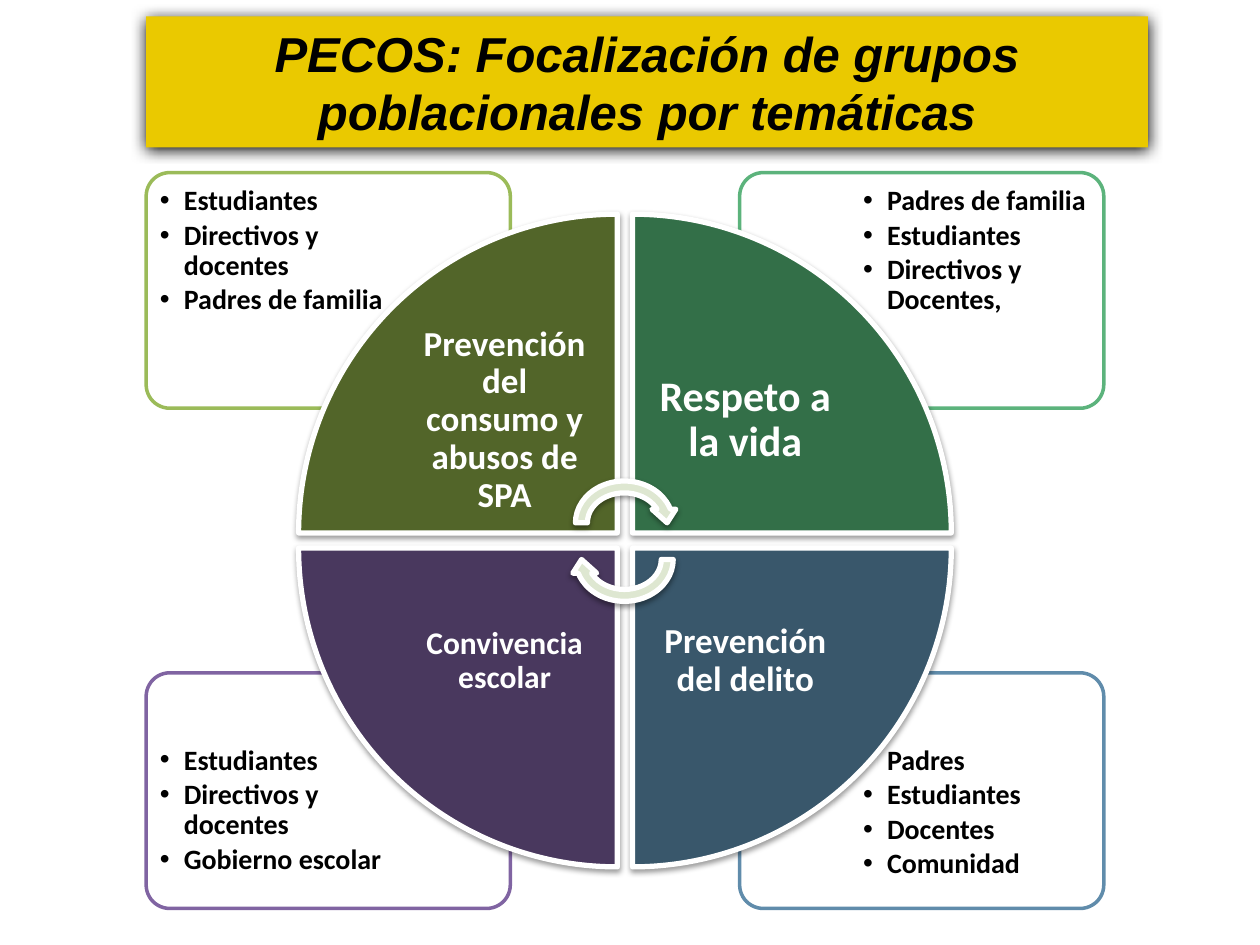
from lxml import etree
from pptx import Presentation
from pptx import util as u
from pptx.dml.color import RGBColor
from pptx.enum import shapes, text
from pptx.oxml.ns import qn

WEDGE, CARD_WIDTH, CARD_HEIGHT = 2.53, 2.89, 1.87
LABEL = 1.79

# column, row, rotation, wedge colour, label, label size, label inset
QUADRANTS = [
    (0, 0, 0, "526529", "Prevención del consumo y abusos de SPA", 20, 0.16),
    (1, 0, 90, "336F48", "Respeto a la vida", 24, 0.19),
    (1, 1, 180, "39576B", "Prevención del delito", 20, 0.16),
    (0, 1, 270, "49385E", "Convivencia escolar", 18, 0.14),
]

# column, row, outline colour, population groups
CARDS = [
    (1, 1, "608CAB", ["Padres", "Estudiantes", "Docentes", "Comunidad"]),
    (0, 1, "8064A2", ["Estudiantes", "Directivos y docentes", "Gobierno escolar"]),
    (1, 0, "5CB37C", ["Padres de familia", "Estudiantes", "Directivos y Docentes,"]),
    (0, 0, "9BBB59", ["Estudiantes", "Directivos y docentes", "Padres de familia"]),
]


def color(value):
    return RGBColor.from_string(value)


def add_child(parent, tag, **attributes):
    child = etree.SubElement(parent, qn(tag))
    for name, value in attributes.items():
        child.set(name, str(value))
    return child


def add_shadow(shape, opacity, blur, distance):
    effects = shape._element.spPr.find(qn("a:effectLst"))
    shadow = add_child(effects, "a:outerShdw", blurRad=u.Pt(blur), dist=u.Pt(distance),
                       dir=90 * 60000, algn="ctr", rotWithShape=0)
    black = add_child(shadow, "a:srgbClr", val="000000")
    add_child(black, "a:alpha", val=opacity * 1000)


def add_figure(page, kind, left, top, width, height, fill, line=None, weight=3, rotation=0):
    shape = page.shapes.add_shape(kind, u.Inches(left), u.Inches(top),
                                  u.Inches(width), u.Inches(height))
    shape.shadow.inherit = False
    shape.rotation = rotation
    shape.fill.solid()
    shape.fill.fore_color.rgb = color(fill)
    if line:
        shape.line.color.rgb = color(line)
        shape.line.width = u.Pt(weight)
    else:
        shape.line.fill.background()
    return shape


def add_text_box(page, left, top, width, height, inset):
    box = page.shapes.add_textbox(u.Inches(left), u.Inches(top),
                                  u.Inches(width), u.Inches(height))
    frame = box.text_frame
    frame.word_wrap = True
    frame.margin_left = frame.margin_right = u.Inches(inset)
    frame.margin_top = frame.margin_bottom = u.Inches(inset)
    return frame


def style_paragraph(para, size, ink, name="Calibri", italic=False):
    for span in para.runs:
        span.font.name = name
        span.font.size = u.Pt(size)
        span.font.bold = True
        span.font.italic = italic
        span.font.color.rgb = color(ink)


def add_title(page):
    banner = add_figure(page, shapes.MSO_SHAPE.RECTANGLE, 1.16, 0.13, 7.95, 1.04, "EAC900")
    add_shadow(banner, 100, 8.5, 1)
    frame = banner.text_frame
    frame.word_wrap = True
    frame.text = "PECOS: Focalización de grupos poblacionales por temáticas"
    para = frame.paragraphs[0]
    para.alignment = text.PP_ALIGN.CENTER
    style_paragraph(para, 28, "000000", "Arial", italic=True)


def add_card(page, column, row, outline, groups):
    left, top = 1.16 + 4.71 * column, 1.37 + 3.97 * row
    card = add_figure(page, shapes.MSO_SHAPE.ROUNDED_RECTANGLE, left, top,
                      CARD_WIDTH, CARD_HEIGHT, "FFFFFF", outline, 2)
    card.adjustments[0] = 0.1
    white = card._element.spPr.find(qn("a:solidFill"))[0]
    add_child(white, "a:alpha", val=90000)

    # The list keeps to the outer corner of its card
    frame = add_text_box(page, left + 0.04 + 0.87 * column, top + 0.04 + 0.47 * row,
                         1.94, 1.32, 0.07)
    frame.text = "\n".join(groups)
    for para in frame.paragraphs:
        para.line_spacing = 0.9
        para.space_after = u.Pt(2.5)
        properties = para._p.get_or_add_pPr()
        properties.set("marL", str(u.Inches(0.19)))
        properties.set("indent", str(u.Inches(-0.19)))
        add_child(properties, "a:buFont", typeface="Arial")
        add_child(properties, "a:buChar", char="•")
        style_paragraph(para, 16, "000000")


def add_quadrant(page, column, row, rotation, fill, label, size, inset):
    left, top = 2.37 + 2.65 * column, 1.7 + 2.65 * row
    wedge = add_figure(page, shapes.MSO_SHAPE.PIE_WEDGE, left, top, WEDGE, WEDGE,
                       fill, "FFFFFF", rotation=rotation)
    add_shadow(wedge, 38, 3.1, 1.6)

    # The label keeps to the centre of the circle
    offset = WEDGE - LABEL
    frame = add_text_box(page, left + offset * (1 - column), top + offset * (1 - row),
                         LABEL, LABEL, inset)
    frame.vertical_anchor = text.MSO_ANCHOR.MIDDLE
    frame.text = label
    para = frame.paragraphs[0]
    para.alignment = text.PP_ALIGN.CENTER
    para.line_spacing = 0.9
    style_paragraph(para, size, "FFFFFF")


def add_cycle_arrow(page, top, rotation):
    arrow = add_figure(page, shapes.MSO_SHAPE.CIRCULAR_ARROW, 4.52, top, 0.87, 0.76,
                       "DEE7D1", "FFFFFF", rotation=rotation)
    add_shadow(arrow, 38, 3.1, 1.6)


def main():
    deck = Presentation()
    deck.slide_width, deck.slide_height = u.Inches(10), u.Inches(7.5)
    page = deck.slides.add_slide(deck.slide_layouts[6])

    add_title(page)
    # Cards lie behind the circle
    for card in CARDS:
        add_card(page, *card)
    for quadrant in QUADRANTS:
        add_quadrant(page, *quadrant)
    # Arrows at the centre
    add_cycle_arrow(page, 3.77, 0)
    add_cycle_arrow(page, 4.06, 180)

    deck.save("out.pptx")


if __name__ == "__main__":
    main()
